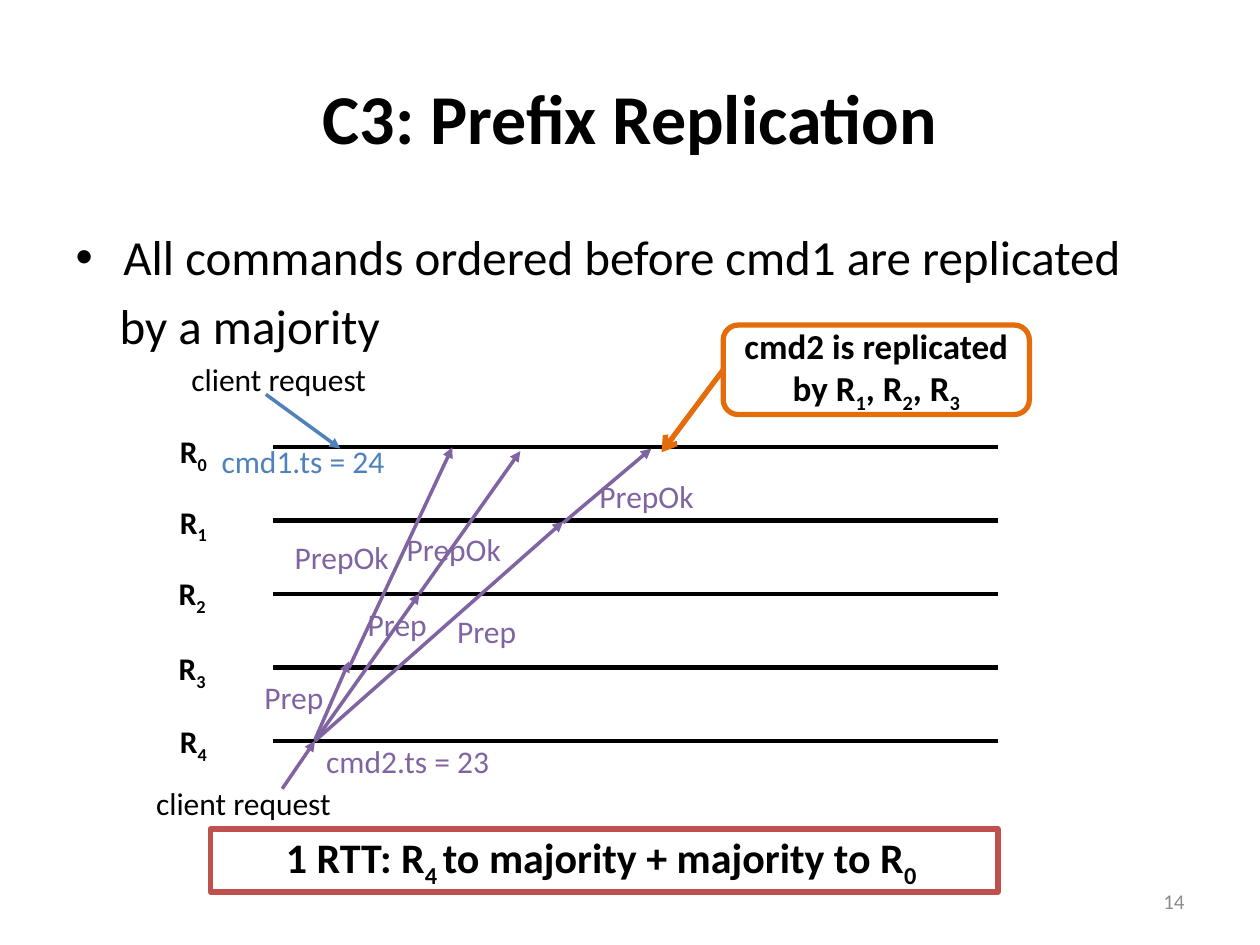
from dataclasses import dataclass

import pptx
import pptx.dml.color
import pptx.enum.shapes
import pptx.enum.text
import pptx.oxml
import pptx.oxml.ns
import pptx.util
from pptx.util import Inches

ALIGN = pptx.enum.text.PP_ALIGN
ANCHOR = pptx.enum.text.MSO_ANCHOR
SHAPES = pptx.enum.shapes.MSO_SHAPE


@dataclass(frozen=True)
class Theme:
    font: str = "Calibri"
    black: str = "000000"
    white: str = "FFFFFF"
    gray: str = "8C8C8C"
    blue: str = "4F81BD"
    purple: str = "8064A2"
    orange: str = "E46C0A"
    red: str = "C0504D"
    title: int = 40
    body: int = 28
    summary: int = 24
    callout: int = 20
    label: int = 18
    page_number: int = 12
    replica_line: float = 2.5
    message_line: float = 2
    outline: float = 3


THEME = Theme()
REPLICA_LINES = [3.55 + 0.5825 * index for index in range(5)]
REPLICA_LABELS = [(1.33, 3.38), (1.33, 3.94), (1.32, 4.51), (1.32, 5.1), (1.33, 5.68)]

MESSAGES = [  # start, end, colour
    ((2.11, 3.13), (2.7, 3.56), THEME.blue),
    ((2.24, 6.26), (2.5, 5.88), THEME.purple),
    ((2.5, 5.87), (2.77, 5.25), THEME.purple),
    ((2.77, 5.3), (3.59, 3.55), THEME.purple),
    ((2.5, 5.88), (3.33, 4.71), THEME.purple),
    ((3.33, 4.71), (4.13, 3.58), THEME.purple),
    ((2.5, 5.88), (4.47, 4.14), THEME.purple),
    ((4.47, 4.15), (5.17, 3.56), THEME.purple),
]

LABELS = [  # text, left, top, width, colour
    ("client request", 1.42, 2.81, 1.61, THEME.black),
    ("client request", 1.14, 6.17, 1.61, THEME.black),
    ("cmd1.ts = 24", 1.66, 3.46, 1.51, THEME.blue),
    ("cmd2.ts = 23", 2.49, 5.84, 1.51, THEME.purple),
    ("Prep", 2, 5.33, 0.68, THEME.purple),
    ("Prep", 2.82, 4.75, 0.68, THEME.purple),
    ("Prep", 3.53, 4.81, 0.68, THEME.purple),
    ("PrepOk", 2.24, 4.22, 0.96, THEME.purple),
    ("PrepOk", 3.13, 4.16, 0.96, THEME.purple),
    ("PrepOk", 4.66, 3.74, 0.96, THEME.purple),
]


def rgb(color):
    return pptx.dml.color.RGBColor.from_string(color)


def add_runs(paragraph, text, size, color=THEME.black, bold=False):
    """Add text in which every second part between bars is a subscript."""
    for index, part in enumerate(text.split("|")):
        run = paragraph.add_run()
        run.text = part
        run.font.name = THEME.font
        run.font.size = pptx.util.Pt(size)
        run.font.bold = bold
        run.font.color.rgb = rgb(color)
        if index % 2:
            run._r.get_or_add_rPr().set("baseline", "-25000")


def set_indent(paragraph, left, first=0):
    properties = paragraph._p.get_or_add_pPr()
    properties.set("marL", str(Inches(left)))
    properties.set("indent", str(Inches(first)))
    return properties


def place(shape, left, top, width, height):
    shape.left, shape.top = Inches(left), Inches(top)
    shape.width, shape.height = Inches(width), Inches(height)


def fill_placeholders(slide):
    title, body = slide.placeholders[0], slide.placeholders[1]
    place(title, 0.5, 0.3, 9, 1.25)
    title.text_frame.vertical_anchor = ANCHOR.MIDDLE
    heading = title.text_frame.paragraphs[0]
    heading.alignment = ALIGN.CENTER
    add_runs(heading, "C3: Prefix Replication", THEME.title, bold=True)

    place(body, 0.5, 1.75, 9, 5.17)
    bullet = body.text_frame.paragraphs[0]
    set_indent(bullet, 0.38, -0.38)
    add_runs(bullet, "All commands ordered before cmd1 are replicated", THEME.body)
    continuation = body.text_frame.add_paragraph()
    properties = set_indent(continuation, 0.35)
    pptx.oxml.ns.qn("a:buNone")
    properties.append(pptx.oxml.parse_xml(
        f'<a:buNone {pptx.oxml.ns.nsdecls("a")}/>'))
    add_runs(continuation, "by a majority", THEME.body)


def add_label(slide, text, left, top, width, color=THEME.black, bold=False):
    box = slide.shapes.add_textbox(Inches(left), Inches(top), Inches(width), Inches(0.4))
    box.text_frame.word_wrap = False
    box.text_frame.auto_size = pptx.enum.text.MSO_AUTO_SIZE.SHAPE_TO_FIT_TEXT
    add_runs(box.text_frame.paragraphs[0], text, THEME.label, color, bold)


def add_page_number(slide, text):
    box = slide.shapes.add_textbox(Inches(9), Inches(6.95), Inches(0.5), Inches(0.4))
    box.text_frame.word_wrap = True
    box.text_frame.vertical_anchor = ANCHOR.MIDDLE
    paragraph = box.text_frame.paragraphs[0]
    paragraph.alignment = ALIGN.RIGHT
    add_runs(paragraph, text, THEME.page_number, THEME.gray)


def add_line(slide, start, end, color, width, arrowhead=None):
    line = slide.shapes.add_connector(
        pptx.enum.shapes.MSO_CONNECTOR.STRAIGHT, *map(Inches, start + end))
    line.line.color.rgb = rgb(color)
    line.line.width = pptx.util.Pt(width)
    namespace = pptx.oxml.ns.nsdecls("a")
    if arrowhead:
        line.line._get_or_add_ln().append(
            pptx.oxml.parse_xml(f'<a:tailEnd {namespace} type="{arrowhead}"/>'))
    line._element.spPr.append(pptx.oxml.parse_xml(f"<a:effectLst {namespace}/>"))
    return line


def add_box(slide, kind, bounds, text, size, line_color, alignment, fill=None):
    box = slide.shapes.add_shape(kind, *map(Inches, bounds))
    box.shadow.inherit = False
    if fill:
        box.fill.solid()
        box.fill.fore_color.rgb = rgb(fill)
    else:
        box.fill.background()
    box.line.color.rgb = rgb(line_color)
    box.line.width = pptx.util.Pt(THEME.outline)
    box.text_frame.word_wrap = True
    box.text_frame.vertical_anchor = ANCHOR.MIDDLE
    paragraph = box.text_frame.paragraphs[0]
    paragraph.alignment = alignment
    add_runs(paragraph, text, size, bold=True)
    return box


def main():
    presentation = pptx.Presentation()
    presentation.slide_width, presentation.slide_height = Inches(10), Inches(7.5)
    slide = presentation.slides.add_slide(presentation.slide_layouts[1])
    fill_placeholders(slide)
    add_page_number(slide, "14")

    for index, (top, label) in enumerate(zip(REPLICA_LINES, REPLICA_LABELS)):
        add_line(slide, (2.17, top), (7.92, top), THEME.black, THEME.replica_line)
        add_label(slide, f"R|{index}", *label, 0.43, bold=True)
    for start, end, color in MESSAGES:
        add_line(slide, start, end, color, THEME.message_line, "triangle")
    for label in LABELS:
        add_label(slide, *label)

    callout = add_box(slide, SHAPES.ROUNDED_RECTANGLE, (5.74, 2.58, 2.43, 0.71),
                      "cmd2 is replicated by R|1|, R|2|, R|3", THEME.callout,
                      THEME.orange, ALIGN.CENTER, THEME.white)
    pointer = add_line(slide, (5.74, 2.94), (5.25, 3.59), THEME.orange,
                       THEME.outline, "arrow")
    pointer.begin_connect(callout, 1)

    summary = add_box(slide, SHAPES.RECTANGLE, (1.67, 6.58, 6.25, 0.5),
                      "1 RTT: R|4 |to majority + majority to R|0", THEME.summary,
                      THEME.red, ALIGN.LEFT)
    set_indent(summary.text_frame.paragraphs[0], 0.5)

    presentation.save("out.pptx")


if __name__ == "__main__":
    main()
